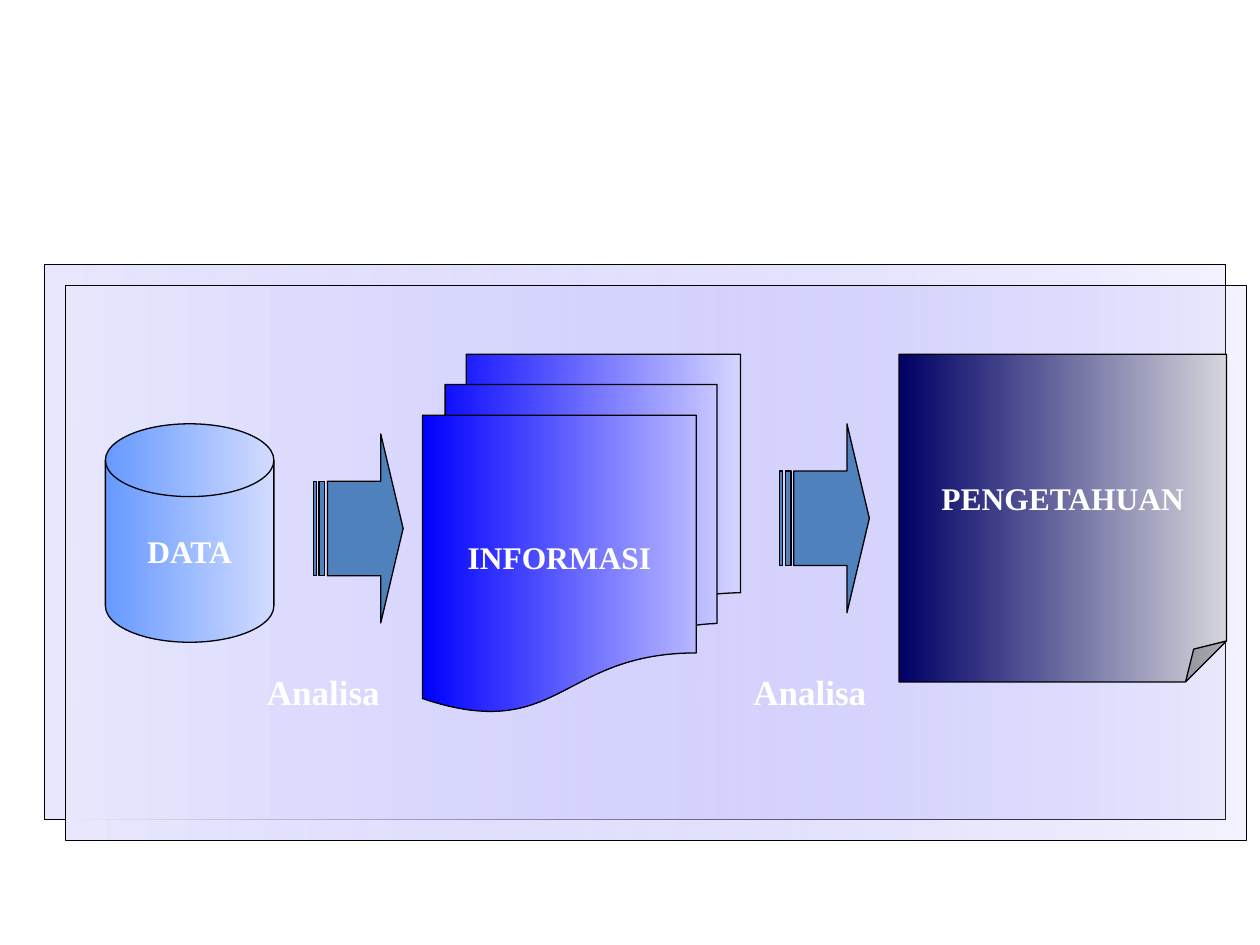
from dataclasses import dataclass

from lxml import etree
from pptx import Presentation
from pptx.dml.color import RGBColor
from pptx.enum.shapes import MSO_SHAPE
from pptx.enum.text import MSO_ANCHOR, PP_ALIGN
from pptx.oxml.ns import qn
from pptx.util import Pt

RECTANGLE = MSO_SHAPE.RECTANGLE
ARROW = MSO_SHAPE.STRIPED_RIGHT_ARROW
CYLINDER = MSO_SHAPE.FLOWCHART_MAGNETIC_DISK
DOCUMENTS = MSO_SHAPE.FLOWCHART_MULTIDOCUMENT
FOLDED_SHEET = MSO_SHAPE.FOLDED_CORNER
MIDDLE = MSO_ANCHOR.MIDDLE
CENTER = PP_ALIGN.CENTER


@dataclass(frozen=True)
class Theme:
    font: str = "Times New Roman"
    stage_size: float = 18
    caption_size: float = 20
    line_width: float = 0.75
    text: str = "FFFFFF"
    line: str = "000000"
    arrow: str = "4F81BD"
    panel: tuple = ("E8E7FE", "B0ACFC")
    panel_end_opacity: int = 14
    data: tuple = ("6699FF", "D2DCFF")
    information: tuple = ("0000FF", "D5D5FF")
    knowledge: tuple = ("000066", "D5D5DB")


THEME = Theme()


def add_outlined_shape(slide, kind, box):
    shape = slide.shapes.add_shape(kind, *map(Pt, box))
    shape.shadow.inherit = False
    shape.line.color.rgb = RGBColor.from_string(THEME.line)
    shape.line.width = Pt(THEME.line_width)
    return shape


def fill_gradient(shape, colors):
    shape.fill.gradient()
    shape.fill.gradient_angle = 0
    for stop, color in zip(shape.fill.gradient_stops, colors):
        stop.color.rgb = RGBColor.from_string(color)


def write_label(shape, text, size):
    paragraph = shape.text_frame.paragraphs[0]
    paragraph.text = text
    paragraph.alignment = CENTER
    paragraph.font.name = THEME.font
    paragraph.font.size = Pt(size)
    paragraph.font.bold = True
    paragraph.font.color.rgb = RGBColor.from_string(THEME.text)


def add_panel(slide, box):
    panel = add_outlined_shape(slide, RECTANGLE, box)
    fill_gradient(panel, THEME.panel)
    gradient = panel.element.spPr.find(qn("a:gradFill"))
    end_color = gradient.findall(".//" + qn("a:srgbClr"))[-1]
    opacity = etree.SubElement(end_color, qn("a:alpha"))
    opacity.set("val", str(THEME.panel_end_opacity * 1000))


def add_stage(slide, kind, box, colors, text):
    stage = add_outlined_shape(slide, kind, box)
    fill_gradient(stage, colors)
    stage.text_frame.word_wrap = False
    stage.text_frame.vertical_anchor = MIDDLE
    write_label(stage, text, THEME.stage_size)
    return stage


def set_fold(sheet, share):
    values = sheet.element.spPr.find(qn("a:prstGeom")).find(qn("a:avLst"))
    guide = etree.SubElement(values, qn("a:gd"))
    guide.set("name", "adj")
    guide.set("fmla", f"val {round(share * 100000)}")


def add_arrow(slide, left, top):
    arrow = add_outlined_shape(slide, ARROW, (left, top, 51.2, 108))
    arrow.adjustments[0] = 0.5
    arrow.adjustments[1] = 0.25
    arrow.fill.solid()
    arrow.fill.fore_color.rgb = RGBColor.from_string(THEME.arrow)


def add_caption(slide, left, text):
    caption = slide.shapes.add_textbox(Pt(left), Pt(379.5), Pt(90.5), Pt(31))
    caption.text_frame.word_wrap = True
    write_label(caption, text, THEME.caption_size)


def main():
    presentation = Presentation()
    presentation.slide_width = Pt(720)
    presentation.slide_height = Pt(540)
    slide = presentation.slides.add_slide(presentation.slide_layouts[6])

    for left, top in ((25.4, 151), (37.4, 163)):
        add_panel(slide, (left, top, 675, 317.5))

    add_arrow(slide, 179.2, 248)
    add_stage(slide, DOCUMENTS, (241.5, 202.5, 181.7, 204.5),
              THEME.information, "INFORMASI")
    sheet = add_stage(slide, FOLDED_SHEET, (513.7, 202.5, 187.2, 187.2),
                      THEME.knowledge, "PENGETAHUAN")
    set_fold(sheet, 0.125)
    add_arrow(slide, 445.6, 242.2)
    add_stage(slide, CYLINDER, (60.2, 242.2, 96.3, 124.8), THEME.data, "DATA")

    for left in (139.5, 417.5):
        add_caption(slide, left, "Analisa")

    presentation.save("out.pptx")


if __name__ == "__main__":
    main()
